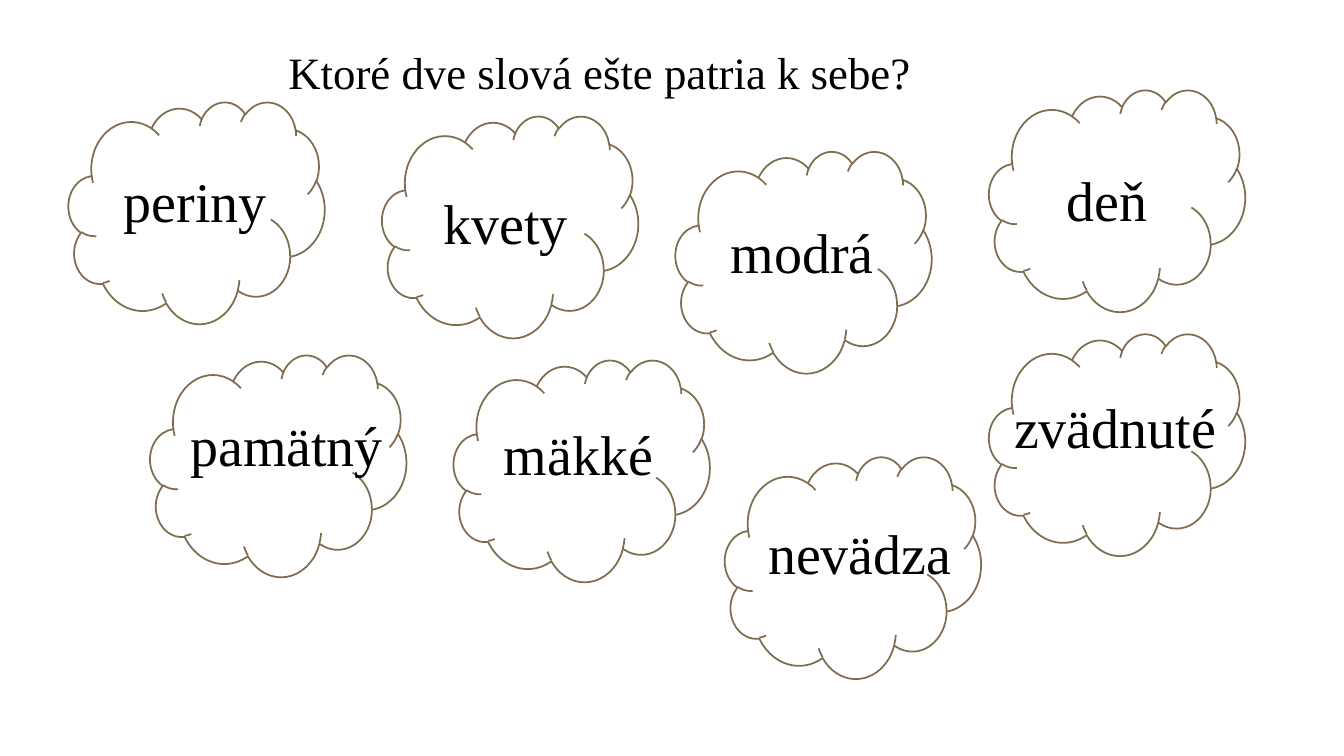
from dataclasses import dataclass

from pptx import Presentation
from pptx.dml.color import RGBColor
from pptx.enum.shapes import MSO_SHAPE
from pptx.enum.text import MSO_ANCHOR as ANCHOR, MSO_AUTO_SIZE as FIT, PP_ALIGN as ALIGN
from pptx.util import Inches, Pt


@dataclass(frozen=True)
class Theme:
    font: str = "Times New Roman"
    text: RGBColor = RGBColor(0, 0, 0)
    outline: RGBColor = RGBColor(0x7F, 0x6D, 0x4F)
    outline_width: float = Pt(1.25)
    title_size: float = Pt(32)
    word_size: float = Pt(40)


THEME = Theme()
CLOUD_W, CLOUD_H = 2.54, 2.2
WORD_H = 0.77

# word, cloud left and top, word offset from the cloud, word width
CLOUDS = [
    ("periny", 0.68, 1.01, 0.45, 0.59, 1.64),
    ("kvety", 3.79, 1.15, 0.51, 0.67, 1.45),
    ("modrá", 6.7, 1.5, 0.45, 0.61, 1.64),
    ("deň", 9.81, 0.89, 0.67, 0.7, 1.01),
    ("pamätný", 1.49, 3.52, 0.3, 0.5, 2.13),
    ("mäkké", 4.5, 3.57, 0.4, 0.54, 1.7),
    ("nevädza", 7.19, 4.53, 0.33, 0.56, 2.04),
    ("zvädnuté", 9.81, 3.31, 0.15, 0.54, 2.23),
]


def write(sp, text, size, wrap, fit):
    tf = sp.text_frame
    frame = {"word_wrap": wrap, "auto_size": fit, "vertical_anchor": ANCHOR.TOP}
    for name, value in frame.items():
        setattr(tf, name, value)
    p = tf.paragraphs[0]
    p.alignment = ALIGN.LEFT
    r = p.add_run()
    r.text = text
    for name, value in {"name": THEME.font, "size": size}.items():
        setattr(r.font, name, value)
    r.font.color.rgb = THEME.text


def add_title(s, text, left, top, width, height):
    sp = s.shapes.title
    box = {"left": left, "top": top, "width": width, "height": height}
    for name, value in box.items():
        setattr(sp, name, Inches(value))
    write(sp, text, THEME.title_size, True, FIT.NONE)


def add_cloud(s, word, left, top, dx, dy, word_w):
    # Outline
    sp = s.shapes.add_shape(MSO_SHAPE.CLOUD, Inches(left), Inches(top),
                            Inches(CLOUD_W), Inches(CLOUD_H))
    sp.shadow.inherit = False
    sp.fill.background()
    sp.line.color.rgb = THEME.outline
    sp.line.width = THEME.outline_width
    # Word
    label = s.shapes.add_textbox(Inches(left + dx), Inches(top + dy),
                                 Inches(word_w), Inches(WORD_H))
    write(label, word, THEME.word_size, False, FIT.SHAPE_TO_FIT_TEXT)


def main():
    prs = Presentation()
    prs.slide_width, prs.slide_height = Inches(13.33), Inches(7.5)
    s = prs.slides.add_slide(prs.slide_layouts[5])
    add_title(s, "Ktoré dve slová ešte patria k sebe?", 2.76, 0.39, 6.67, 1.18)
    for cloud in CLOUDS:
        add_cloud(s, *cloud)
    prs.save("out.pptx")


if __name__ == "__main__":
    main()
